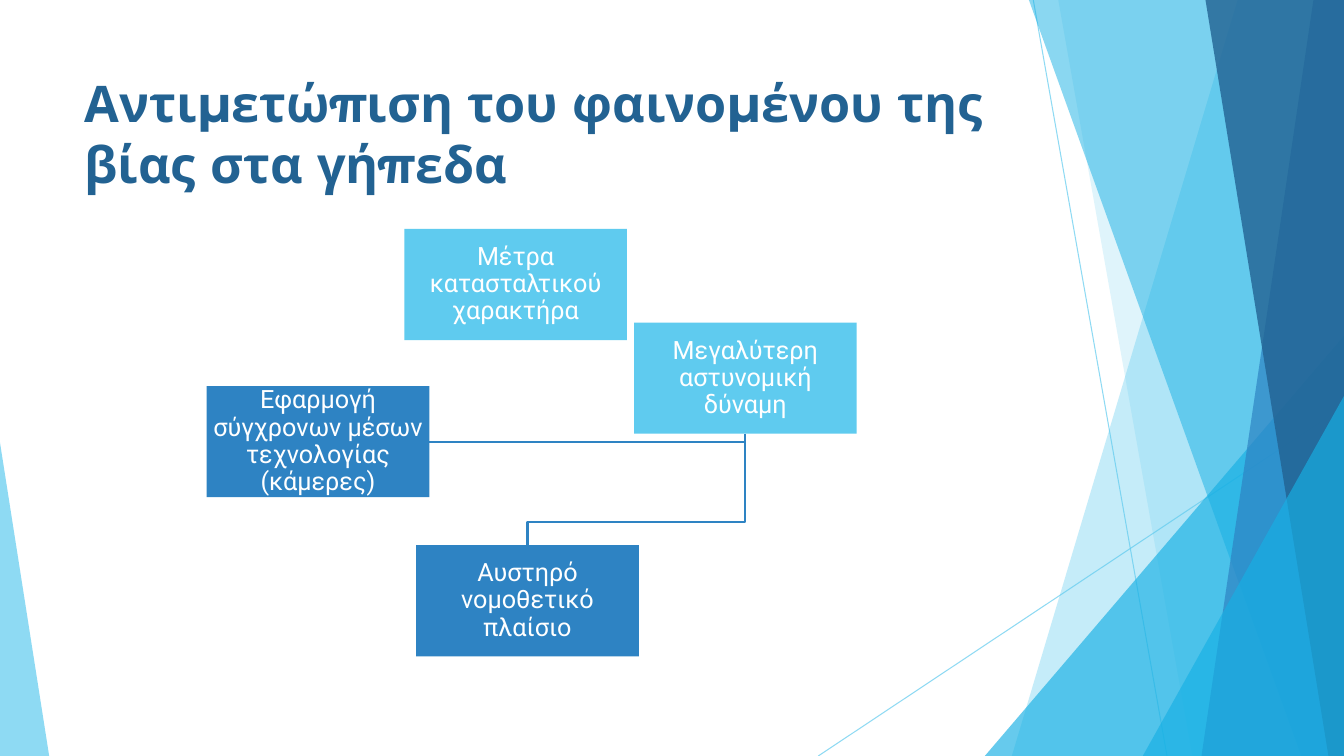
from dataclasses import dataclass

from lxml.etree import SubElement
from pptx import Presentation
from pptx.dml.color import RGBColor
from pptx.enum.shapes import MSO_CONNECTOR as Link, MSO_SHAPE as Preset
from pptx.enum.text import MSO_ANCHOR as Anchor, MSO_AUTO_SIZE as AutoSize, PP_ALIGN as Align
from pptx.oxml.ns import qn
from pptx.util import Cm, Pt


@dataclass(frozen=True)
class Theme:
    sky: str = "5FCBEF"
    azure: str = "17B0E4"
    blue: str = "2E83C3"
    navy: str = "226292"
    white: str = "FFFFFF"
    title_font: str = "Montserrat"
    box_font: str = "Roboto"
    title_size: int = 36
    box_size: int = 18
    hairline: float = 0.75
    branch_line: float = 1.5


THEME = Theme()
WIDTH, HEIGHT = 33.87, 19.05
BOX_WIDTH, BOX_HEIGHT = 5.61, 2.8


def apply(target, values):
    for name, value in values.items():
        setattr(target, name, value)


def paint(fill, color, opacity=100):
    fill.solid()
    fill.fore_color.rgb = RGBColor.from_string(color)
    if opacity < 100:
        # Transparency sits inside the colour element
        for srgb in fill._xPr.iter(qn("a:srgbClr")):
            SubElement(srgb, qn("a:alpha")).set("val", str(opacity * 1000))


def plain(shape, color, opacity=100):
    shape.shadow.inherit = False
    shape.line.fill.background()
    paint(shape.fill, color, opacity)
    return shape


def outline(slide, points, close):
    corners = [(Cm(x), Cm(y)) for x, y in points]
    builder = slide.shapes.build_freeform(*corners[0])
    builder.add_line_segments(corners[1:], close=close)
    return builder.convert_to_shape()


# Background facets
def add_ray(slide, start, end):
    ends = [Cm(value) for value in (*start, *end)]
    ray = slide.shapes.add_connector(Link.STRAIGHT, *ends)
    ray.line.width = Pt(THEME.hairline)
    paint(ray.line.fill, THEME.sky, 70)
    SubElement(ray._element.spPr, qn("a:effectLst"))


def add_facet(slide, top_x, bottom_x, color, opacity):
    points = [(top_x, 0), (WIDTH, 0), (WIDTH, HEIGHT), (bottom_x, HEIGHT)]
    plain(outline(slide, points, True), color, opacity)


def add_corner(slide, left, right, top, peak, color, opacity):
    corner = slide.shapes.add_shape(Preset.ISOSCELES_TRIANGLE, Cm(left), Cm(top),
                                    Cm(right - left), Cm(HEIGHT - top))
    corner.adjustments[0] = peak
    plain(corner, color, opacity)


def add_backdrop(slide):
    add_ray(slide, (26.04, 0), (29.41, HEIGHT))
    add_ray(slide, (WIDTH, 10.24), (20.62, HEIGHT))
    add_facet(slide, 31.19, 25.5, THEME.sky, 36)
    add_facet(slide, 26.67, 30.05, THEME.sky, 20)
    add_corner(slide, 24.82, WIDTH, 8.46, 1, THEME.azure, 66)
    add_facet(slide, 25.93, 32.79, THEME.azure, 50)
    add_facet(slide, 33.1, 30.28, THEME.blue, 70)
    add_facet(slide, 30.38, 33.48, THEME.navy, 80)
    add_corner(slide, 28.8, WIDTH, 9.98, 1, THEME.azure, 66)
    add_corner(slide, 0, 1.24, 11.15, 0, THEME.sky, 70)


# Text
def write(shape, text, font, size, color, align, anchor, bold=False):
    frame = shape.text_frame
    frame.text = text
    apply(frame, {"word_wrap": True, "auto_size": AutoSize.NONE, "vertical_anchor": anchor})
    paragraph = frame.paragraphs[0]
    paragraph.alignment = align
    letters = paragraph.runs[0].font
    apply(letters, {"name": font, "size": Pt(size), "bold": bold})
    letters.color.rgb = RGBColor.from_string(color)
    return frame


def add_title(slide, text):
    title = slide.shapes.title
    apply(title, {"left": Cm(1.88), "top": Cm(1.7), "width": Cm(23.88), "height": Cm(3.66)})
    frame = write(title, text, THEME.title_font, THEME.title_size, THEME.navy,
                  Align.LEFT, Anchor.TOP, bold=True)
    frame.paragraphs[0].line_spacing = 1.0


# Measures diagram
def add_measure(slide, text, left, top, color):
    measure = slide.shapes.add_shape(Preset.RECTANGLE, Cm(left), Cm(top),
                                     Cm(BOX_WIDTH), Cm(BOX_HEIGHT))
    plain(measure, color)
    frame = write(measure, text, THEME.box_font, THEME.box_size, THEME.white,
                  Align.CENTER, Anchor.MIDDLE)
    sides = ("left", "right", "top", "bottom")
    apply(frame, {f"margin_{side}": Cm(0.03) for side in sides})
    frame.paragraphs[0].line_spacing = 0.9


def add_branch(slide, points):
    branch = outline(slide, points, False)
    branch.shadow.inherit = False
    branch.fill.background()
    branch.line.width = Pt(THEME.branch_line)
    paint(branch.line.fill, THEME.blue)


def add_diagram(slide):
    heading, police, law, cameras = (10.19, 5.77), (15.98, 8.13), (10.49, 13.74), (5.21, 9.73)
    stem_x, stem_y = police[0] + BOX_WIDTH / 2, police[1] + BOX_HEIGHT
    law_x = law[0] + BOX_WIDTH / 2
    cameras_y = cameras[1] + BOX_HEIGHT / 2
    bend_y = law[1] - 0.58
    add_branch(slide, [(stem_x, stem_y), (stem_x, cameras_y),
                       (cameras[0] + BOX_WIDTH, cameras_y)])
    add_branch(slide, [(stem_x, stem_y), (stem_x, bend_y), (law_x, bend_y), (law_x, law[1])])
    add_measure(slide, "Μέτρα κατασταλτικού χαρακτήρα", *heading, THEME.sky)
    add_measure(slide, "Μεγαλύτερη αστυνομική δύναμη", *police, THEME.sky)
    add_measure(slide, "Αυστηρό νομοθετικό πλαίσιο", *law, THEME.blue)
    add_measure(slide, "Εφαρμογή σύγχρονων μέσων τεχνολογίας (κάμερες)", *cameras, THEME.blue)


def main():
    deck = Presentation()
    apply(deck, {"slide_width": Cm(WIDTH), "slide_height": Cm(HEIGHT)})
    slide = deck.slides.add_slide(deck.slide_layouts.get_by_name("Title Only"))
    add_backdrop(slide)
    add_title(slide, "Αντιμετώπιση του φαινομένου της βίας στα γήπεδα")
    add_diagram(slide)
    deck.save("out.pptx")


if __name__ == "__main__":
    main()
